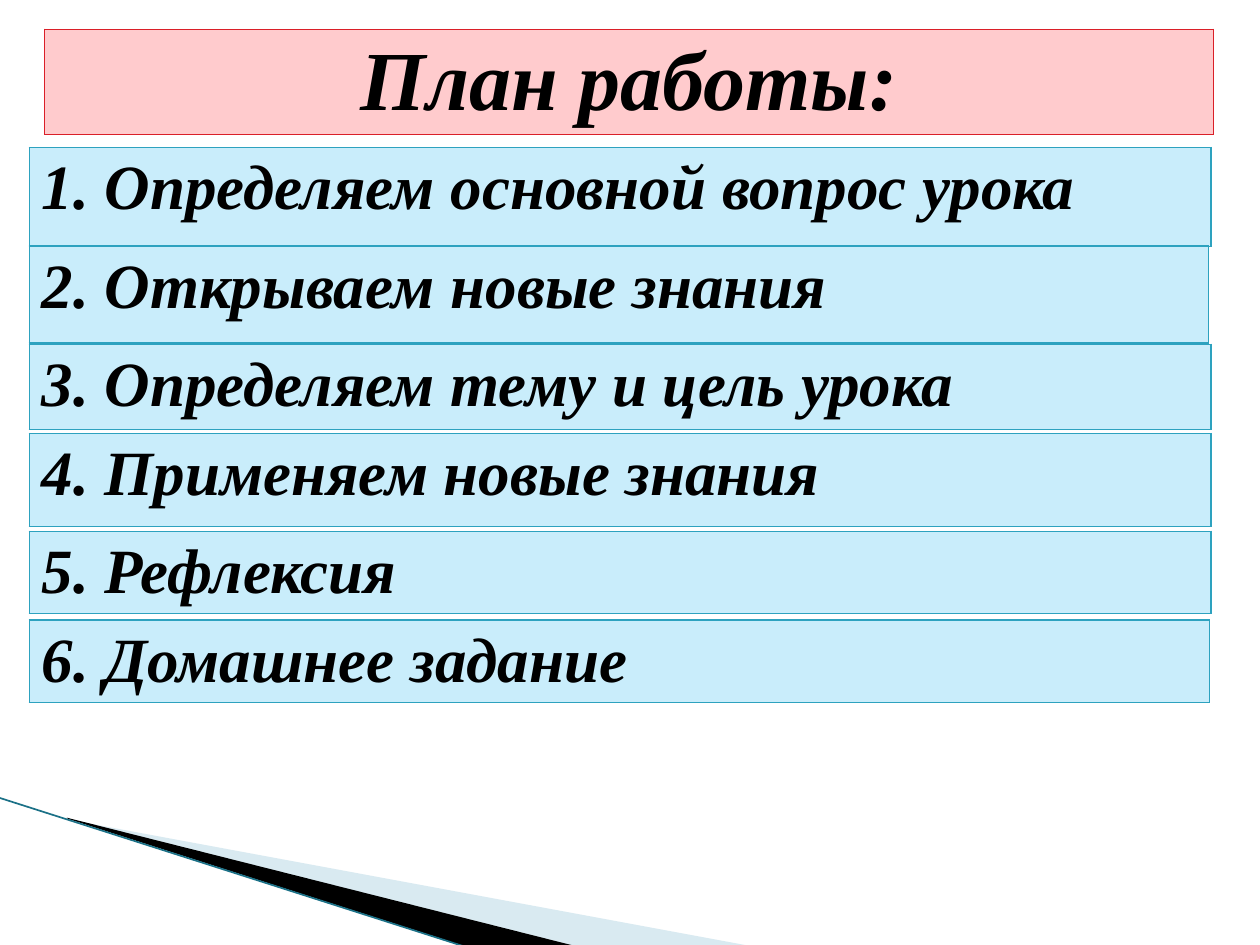
"""Builds the lesson plan slide: a title bar, six numbered steps and a corner decoration."""
from lxml import etree
from pptx import Presentation
from pptx.dml.color import RGBColor
from pptx.enum.shapes import MSO_CONNECTOR
from pptx.enum.text import PP_ALIGN
from pptx.oxml.ns import qn
from pptx.util import Pt

CENTER, LEFT = PP_ALIGN.CENTER, PP_ALIGN.LEFT
STRAIGHT = MSO_CONNECTOR.STRAIGHT

COLORS = {
    "text": "000000",
    "title_fill": "FFCBCD",
    "title_border": "DA1F28",
    "step_fill": "C9EDFB",
    "step_border": "2DA2BF",
    "pale_wedge": "A0CBDC",
    "dark_wedge": "000000",
    "edge": "1B7187",
}
FONT = "Times New Roman"

TITLE = "План работы:"
STEPS = [
    ("Определяем основной вопрос урока", 84.2, 56.9, 675.4),
    ("Открываем новые знания", 140.6, 55.4, 674),
    ("Определяем тему и цель урока", 196.6, 49, 675.4),
    ("Применяем новые знания", 247.6, 53.3, 675.4),
    ("Рефлексия", 303.6, 45.4, 675.4),
    ("Домашнее задание", 354.3, 43.2, 674.6),
]
STEP_LEFT = 16.6
WEDGES = [
    ("pale_wedge", 40, [(39.6, 468.5), (428.4, 540.5), (328.3, 540.5), (39.6, 468)]),
    ("dark_wedge", 100, [(38.2, 467.3), (329, 540.7), (267.8, 541.4), (38.9, 468)]),
]
EDGE = [(-0.7, 455.8), (267.1, 541.4)]


def rgb(name):
    return RGBColor.from_string(COLORS[name])


def add_wedge(s, color, alpha, points):
    points = [(Pt(x), Pt(y)) for x, y in points]
    builder = s.shapes.build_freeform(*points[0])
    builder.add_line_segments(points[1:], close=True)
    sp = builder.convert_to_shape()
    sp.shadow.inherit = False
    sp.fill.solid()
    sp.fill.fore_color.rgb = rgb(color)
    sp.line.fill.background()
    if alpha < 100:
        clr = sp.fill._xPr.find(".//" + qn("a:srgbClr"))
        etree.SubElement(clr, qn("a:alpha"), val=str(alpha * 1000))


def add_edge(s, start, end):
    line = s.shapes.add_connector(STRAIGHT, *map(Pt, start + end))
    line.line.color.rgb = rgb("edge")
    line.line.width = Pt(0.95)
    etree.SubElement(line._element.spPr, qn("a:effectLst"))


def add_bar(s, text, box, kind, size, align):
    table = s.shapes.add_table(1, 1, *map(Pt, box)).table
    table.first_row = table.horz_banding = False
    cell = table.cell(0, 0)
    tc_pr = cell._tc.get_or_add_tcPr()
    for side in ("lnL", "lnR", "lnT", "lnB"):
        ln = etree.SubElement(tc_pr, qn("a:" + side), w=str(Pt(0.75)))
        fill = etree.SubElement(ln, qn("a:solidFill"))
        etree.SubElement(fill, qn("a:srgbClr"), val=COLORS[kind + "_border"])
    cell.fill.solid()
    cell.fill.fore_color.rgb = rgb(kind + "_fill")
    p = cell.text_frame.paragraphs[0]
    p.text = text
    p.alignment = align
    p.font.name = FONT
    p.font.size = Pt(size)
    p.font.bold = p.font.italic = True
    p.font.color.rgb = rgb("text")


def main():
    prs = Presentation()
    prs.slide_width, prs.slide_height = Pt(720), Pt(540)
    s = prs.slides.add_slide(prs.slide_layouts[6])
    for wedge in WEDGES:
        add_wedge(s, *wedge)
    add_edge(s, *EDGE)
    add_bar(s, TITLE, (39.6 - 14, 16.6, 667.8, 60.5), "title", 48, CENTER)
    for number, (text, top, height, width) in enumerate(STEPS, 1):
        box = (STEP_LEFT, top, width, height)
        add_bar(s, f"{number}. {text}", box, "step", 36, LEFT)
    prs.save("out.pptx")


if __name__ == "__main__":
    main()
